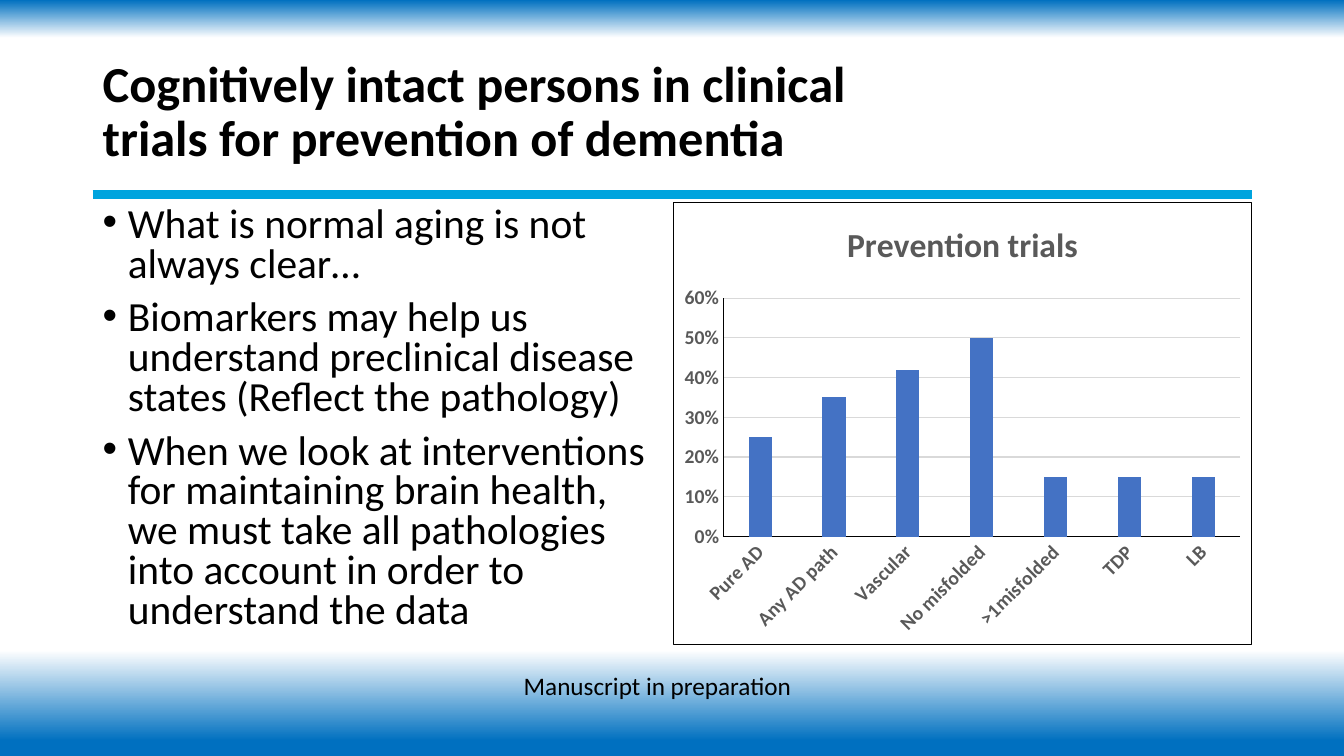
from lxml.etree import SubElement
from pptx import Presentation
from pptx.chart.data import CategoryChartData
from pptx.dml.color import RGBColor
from pptx.enum.chart import XL_CHART_TYPE, XL_TICK_MARK
from pptx.enum.shapes import MSO_CONNECTOR
from pptx.enum.text import MSO_ANCHOR, PP_ALIGN
from pptx.oxml import parse_xml
from pptx.oxml.ns import nsdecls, qn
from pptx.util import Inches, Pt

TITLE = "Cognitively intact persons in clinical trials for prevention of dementia"
POINTS = [
    "What is normal aging is not always clear…",
    "Biomarkers may help us understand preclinical disease states (Reflect the pathology)",
    "When we look at interventions for maintaining brain health, we must take all "
    "pathologies into account in order to understand the data",
]
FOOTNOTE = "Manuscript in preparation"
CHART_TITLE = "Prevention trials"
TRIAL_SHARES = {
    "Pure AD": 0.25, "Any AD path": 0.35, "Vascular": 0.42, "No misfolded": 0.5,
    ">1misfolded": 0.15, "TDP": 0.15, "LB": 0.15,
}

FONT = "Calibri"
BLACK = RGBColor(0x00, 0x00, 0x00)
WHITE = RGBColor(0xFF, 0xFF, 0xFF)
EDGE_BLUE = RGBColor(0x00, 0x70, 0xC0)
RULE_BLUE = RGBColor(0x00, 0xA4, 0xDE)
BAR_BLUE = RGBColor(0x44, 0x72, 0xC4)
LABEL_GRAY = RGBColor(0x59, 0x59, 0x59)
GRID_GRAY = RGBColor(0xD9, 0xD9, 0xD9)
BACKGROUND_STOPS = [(0, EDGE_BLUE), (5, WHITE), (86, WHITE), (98, EDGE_BLUE)]

LEFT, RIGHT = 0.92, 12.42
RULE_Y = 1.93
BODY_TOP = 2
CHART_LEFT = 6.67


def set_font(font, size, color=BLACK, bold=False):
    font.name = FONT
    font.size = Pt(size)
    font.color.rgb = color
    font.bold = bold


def add_text_box(slide, left, top, width, height):
    box = slide.shapes.add_textbox(Inches(left), Inches(top), Inches(width), Inches(height))
    box.text_frame.word_wrap = True
    return box.text_frame


def paint_background(slide):
    fill = slide.background.fill
    fill.gradient()
    fill.gradient_angle = 270
    stop_list = fill.gradient_stops[0]._gs.getparent()
    for stop in list(stop_list):
        stop_list.remove(stop)
    for percent, color in BACKGROUND_STOPS:
        stop = SubElement(stop_list, qn("a:gs"), pos=str(percent * 1000))
        SubElement(stop, qn("a:srgbClr"), val=str(color))


def add_rule(slide):
    rule = slide.shapes.add_connector(
        MSO_CONNECTOR.STRAIGHT, Inches(LEFT), Inches(RULE_Y), Inches(RIGHT), Inches(RULE_Y))
    rule.line.color.rgb = RULE_BLUE
    rule.line.width = Pt(6)
    SubElement(rule._element.spPr, qn("a:effectLst"))


def add_title(slide):
    frame = add_text_box(slide, LEFT, 0.4, 7.69, 1.45)
    frame.vertical_anchor = MSO_ANCHOR.MIDDLE
    heading = frame.paragraphs[0]
    heading.text = TITLE
    heading.line_spacing = 0.9
    set_font(heading.font, 36, bold=True)


def add_points(slide):
    frame = add_text_box(slide, LEFT, BODY_TOP, 5.6, 4.6)
    for index, point in enumerate(POINTS):
        paragraph = frame.add_paragraph() if index else frame.paragraphs[0]
        paragraph.text = point
        paragraph.line_spacing = 0.8
        if index:
            paragraph.space_before = Pt(10)
        properties = paragraph._p.get_or_add_pPr()
        properties.set("marL", str(Inches(0.25)))
        properties.set("indent", str(Inches(-0.25)))
        SubElement(properties, qn("a:buFont"), typeface="Arial")
        SubElement(properties, qn("a:buChar"), char="•")
        set_font(paragraph.font, 29.6)


def add_trials_chart(slide):
    data = CategoryChartData(number_format="0%")
    data.categories = list(TRIAL_SHARES)
    data.add_series("Series 1", list(TRIAL_SHARES.values()))
    chart = slide.shapes.add_chart(
        XL_CHART_TYPE.COLUMN_CLUSTERED, Inches(CHART_LEFT), Inches(BODY_TOP),
        Inches(RIGHT - CHART_LEFT), Inches(4.4), data).chart
    chart.has_legend = False
    set_font(chart.font, 10)

    chart.has_title = True
    heading = chart.chart_title.text_frame.paragraphs[0]
    heading.text = CHART_TITLE
    set_font(heading.font, 24, LABEL_GRAY, bold=True)
    chart.chart_title.include_in_layout = False

    plot = chart.plots[0]
    plot.gap_width = 219
    plot.overlap = -27
    plot.vary_by_categories = False
    bars = plot.series[0].format.fill
    bars.solid()
    bars.fore_color.rgb = BAR_BLUE

    for axis in (chart.category_axis, chart.value_axis):
        axis.major_tick_mark = axis.minor_tick_mark = XL_TICK_MARK.NONE
        set_font(axis.tick_labels.font, 14, LABEL_GRAY, bold=True)
        axis.format.line.color.rgb = BLACK
        axis.format.line.width = Pt(0.75)
    chart.category_axis._element.txPr.find(qn("a:bodyPr")).set("rot", str(-45 * 60000))

    shares = chart.value_axis
    shares.minimum_scale, shares.maximum_scale, shares.major_unit = 0, 0.6, 0.1
    shares.tick_labels.number_format = "0%"
    shares.tick_labels.number_format_is_linked = False
    shares.major_gridlines.format.line.color.rgb = GRID_GRAY
    shares.major_gridlines.format.line.width = Pt(0.75)

    border = parse_xml(
        f'<c:spPr {nsdecls("c", "a")}><a:noFill/><a:ln w="{Pt(0.75)}"><a:solidFill>'
        f'<a:srgbClr val="{BLACK}"/></a:solidFill></a:ln></c:spPr>')
    chart._chartSpace.find(qn("c:chart")).addnext(border)


def add_footnote(slide):
    note = add_text_box(slide, 3.51, 6.6, 6.02, 0.4).paragraphs[0]
    note.text = FOOTNOTE
    note.alignment = PP_ALIGN.CENTER
    set_font(note.font, 18)


def main():
    deck = Presentation()
    deck.slide_width, deck.slide_height = Inches(13.33), Inches(7.5)
    slide = deck.slides.add_slide(deck.slide_layouts[6])
    paint_background(slide)
    add_rule(slide)
    add_title(slide)
    add_points(slide)
    add_trials_chart(slide)
    add_footnote(slide)
    deck.save("out.pptx")


if __name__ == "__main__":
    main()
